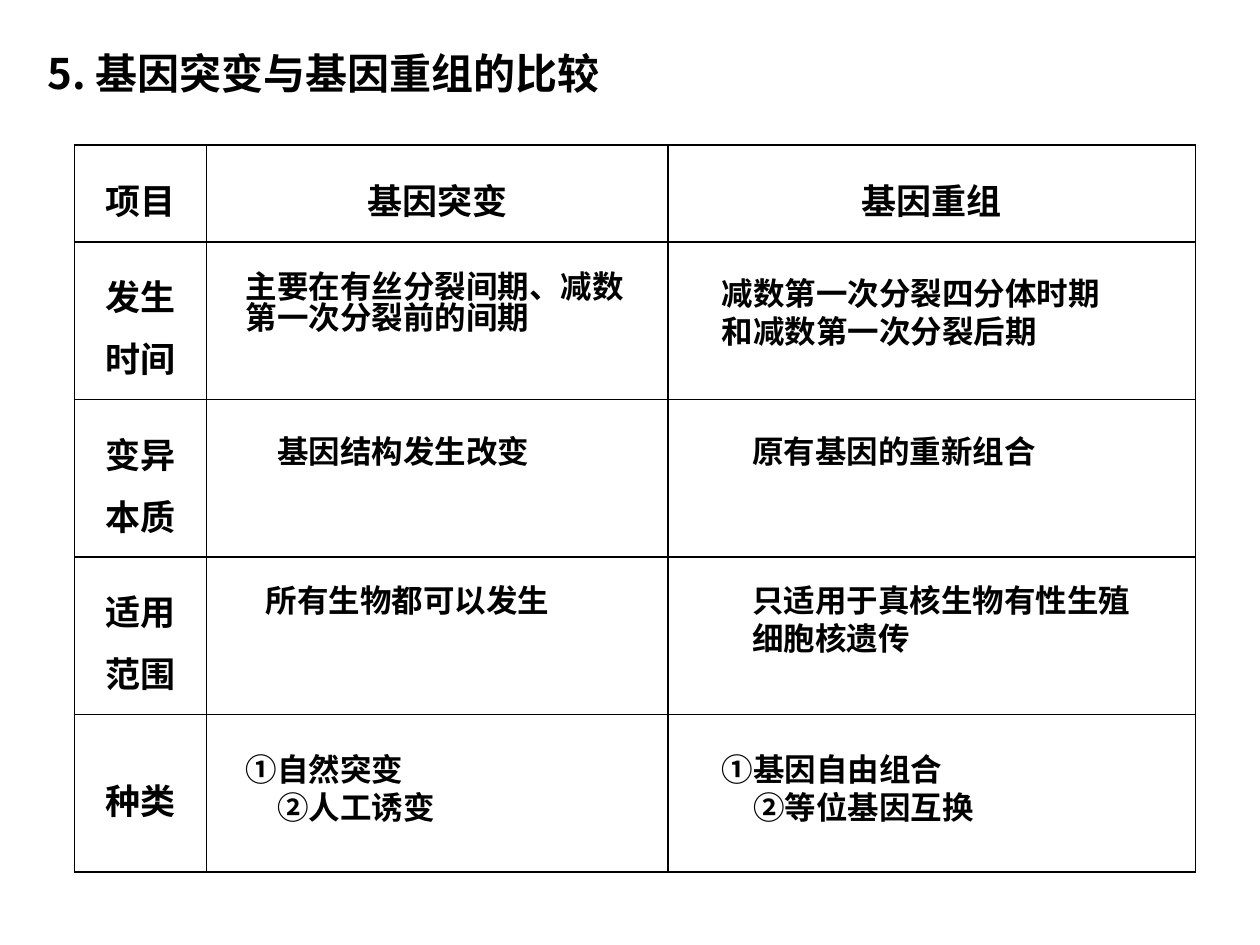
from dataclasses import dataclass

from lxml import etree
from pptx import Presentation
from pptx.dml.color import RGBColor
from pptx.enum.text import MSO_ANCHOR, MSO_AUTO_SIZE, PP_ALIGN
from pptx.oxml.ns import qn
from pptx.util import Inches, Pt

BLACK = RGBColor(0x00, 0x00, 0x00)
TOP, MIDDLE = MSO_ANCHOR.TOP, MSO_ANCHOR.MIDDLE
CENTER, LEFT = PP_ALIGN.CENTER, PP_ALIGN.LEFT
GROW, FIXED = MSO_AUTO_SIZE.SHAPE_TO_FIT_TEXT, MSO_AUTO_SIZE.NONE
CJK_FONT = "Noto Sans CJK SC"
LATIN_FONT = "Times New Roman"

COLUMN_WIDTHS = (1.05, 3.66, 4.19)
ROW_HEIGHTS = (0.77, 1.25, 1.25, 1.25, 1.25)
HEADERS = ("项目", "基因突变", "基因重组")
ROW_LABELS = (("发生", "时间"), ("变异", "本质"), ("适用", "范围"), ("种类",))


@dataclass(frozen=True)
class Answer:
    left: float
    top: float
    width: float
    height: float
    lines: tuple[str, ...]
    spacing: float = 1.01


ANSWERS = (
    Answer(1.85, 2.12, 3.31, 0.71, ("主要在有丝分裂间期、减数第一次分裂前的间期",), 0.82),
    Answer(5.63, 2.12, 3.23, 0.81, ("减数第一次分裂四分体时期和减数第一次分裂后期",)),
    Answer(1.85, 3.38, 3.31, 0.44, ("　基因结构发生改变",)),
    Answer(5.87, 3.38, 3.31, 0.44, ("原有基因的重新组合",)),
    Answer(2.01, 4.56, 2.83, 0.44, ("所有生物都可以发生",)),
    Answer(5.87, 4.56, 3.31, 0.81, ("只适用于真核生物有性生殖细胞核遗传",)),
    Answer(1.85, 5.9, 3.31, 0.81, ("①自然突变", "　②人工诱变")),
    Answer(5.63, 5.9, 2.76, 0.81, ("①基因自由组合", "　②等位基因互换")),
)


def write_lines(frame, lines: tuple[str, ...], size: float, spacing: float,
                align=LEFT, latin: str = LATIN_FONT) -> None:
    font_format = {"name": latin, "size": Pt(size), "bold": True}
    paragraph_format = {"alignment": align, "line_spacing": spacing, "space_before": Pt(0)}
    for index, line in enumerate(lines):
        paragraph = frame.add_paragraph() if index else frame.paragraphs[0]
        for name, value in paragraph_format.items():
            setattr(paragraph, name, value)
        run = paragraph.add_run()
        run.text = line
        for name, value in font_format.items():
            setattr(run.font, name, value)
        run.font.color.rgb = BLACK
        east_asian = etree.SubElement(run.font._element, qn("a:ea"))
        east_asian.set("typeface", CJK_FONT)


def add_heading(slide) -> None:
    heading = slide.placeholders[1]
    bounds = {"left": 0.28, "top": 0.29, "width": 8.66, "height": 5.9}
    for name, value in bounds.items():
        setattr(heading, name, Inches(value))
    frame = heading.text_frame
    frame.auto_size = FIXED
    frame.vertical_anchor = TOP
    write_lines(frame, ("5. 基因突变与基因重组的比较",), 24, 1.1, latin=CJK_FONT)
    properties = frame.paragraphs[0]._p.get_or_add_pPr()
    properties.set("marL", "0")
    properties.set("indent", "0")
    etree.SubElement(properties, qn("a:buNone"))


def add_borders(cell) -> None:
    """Rule all four sides; borders must come before the cell's fill."""
    properties = cell._tc.get_or_add_tcPr()
    for position, side in enumerate(("a:lnL", "a:lnR", "a:lnT", "a:lnB")):
        line = etree.Element(qn(side), w=str(Pt(1)))
        fill = etree.SubElement(line, qn("a:solidFill"))
        etree.SubElement(fill, qn("a:srgbClr"), val=str(BLACK))
        properties.insert(position, line)


def add_comparison_table(slide) -> None:
    table = slide.shapes.add_table(
        len(ROW_HEIGHTS), len(COLUMN_WIDTHS), Inches(0.59), Inches(1.15),
        Inches(sum(COLUMN_WIDTHS)), Inches(sum(ROW_HEIGHTS))).table
    table.first_row = table.horz_banding = False
    for column, width in zip(table.columns, COLUMN_WIDTHS):
        column.width = Inches(width)
    for row, height in zip(table.rows, ROW_HEIGHTS):
        row.height = Inches(height)
    for cell in table.iter_cells():
        cell.fill.background()
        cell.vertical_anchor = MIDDLE
        add_borders(cell)
    for column, header in enumerate(HEADERS):
        write_lines(table.cell(0, column).text_frame, (header,), 20, 1.22, CENTER)
    for row, label in enumerate(ROW_LABELS, start=1):
        write_lines(table.cell(row, 0).text_frame, label, 20, 1.22, CENTER)


def add_answer(slide, answer: Answer) -> None:
    box = slide.shapes.add_textbox(Inches(answer.left), Inches(answer.top),
                                   Inches(answer.width), Inches(answer.height))
    frame = box.text_frame
    frame.word_wrap = True
    frame.auto_size = GROW
    write_lines(frame, answer.lines, 18, answer.spacing)


def main() -> None:
    presentation = Presentation()
    presentation.slide_width = Inches(10)
    presentation.slide_height = Inches(7.5)
    slide = presentation.slides.add_slide(presentation.slide_layouts[1])
    unused_title = slide.shapes.title._element
    unused_title.getparent().remove(unused_title)
    add_heading(slide)
    add_comparison_table(slide)
    for answer in ANSWERS:
        add_answer(slide, answer)
    presentation.save("out.pptx")


if __name__ == "__main__":
    main()
